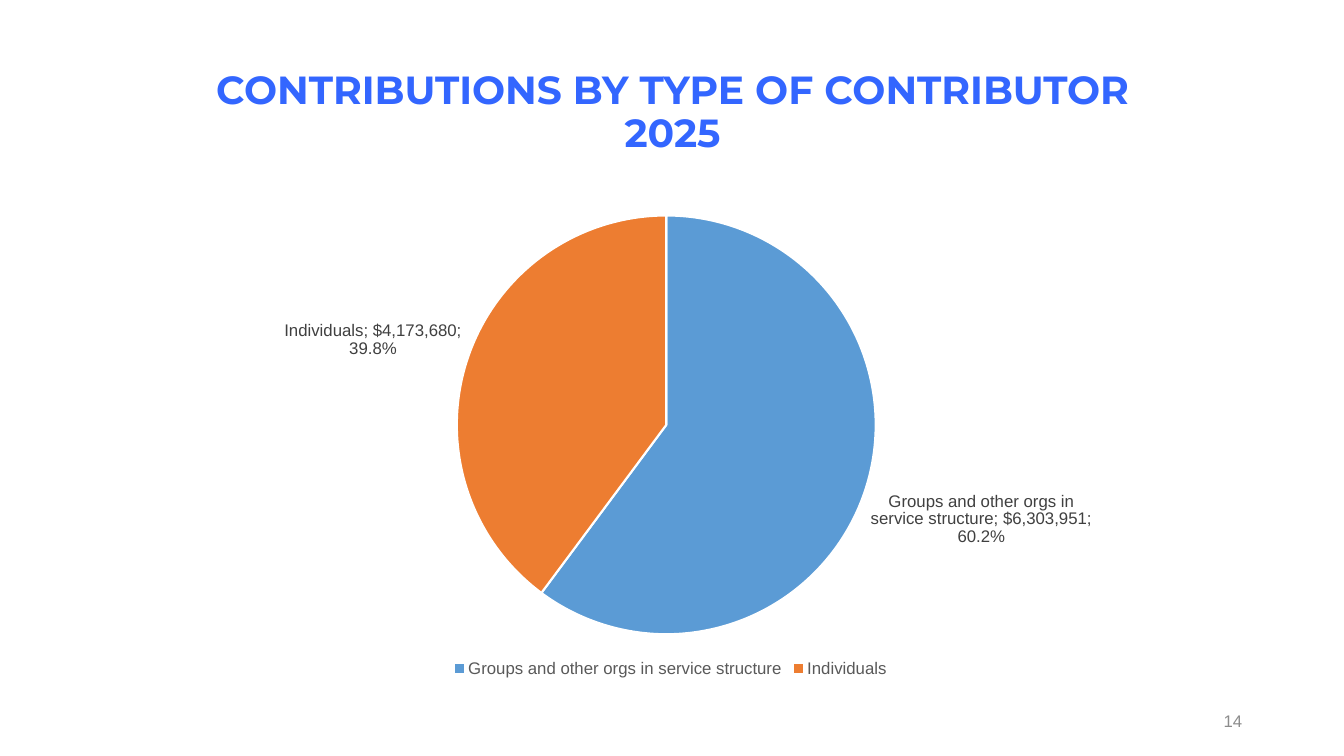
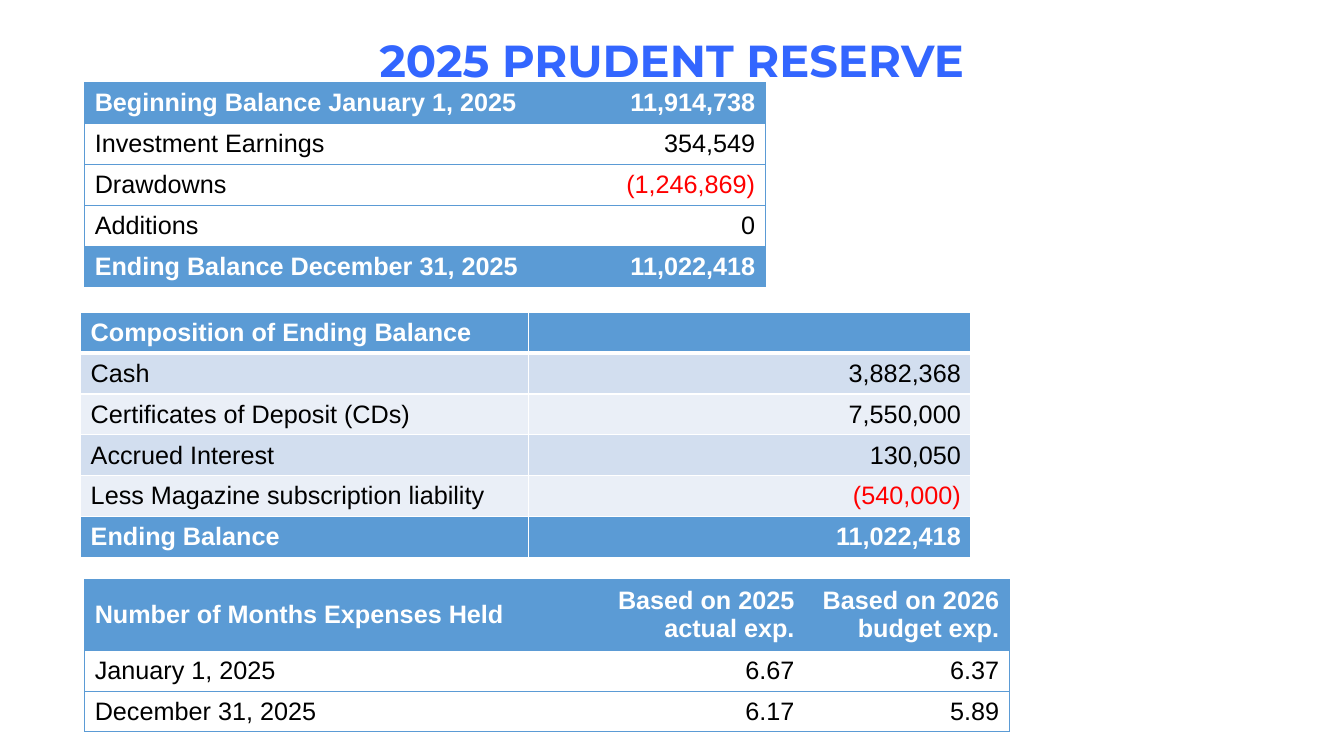
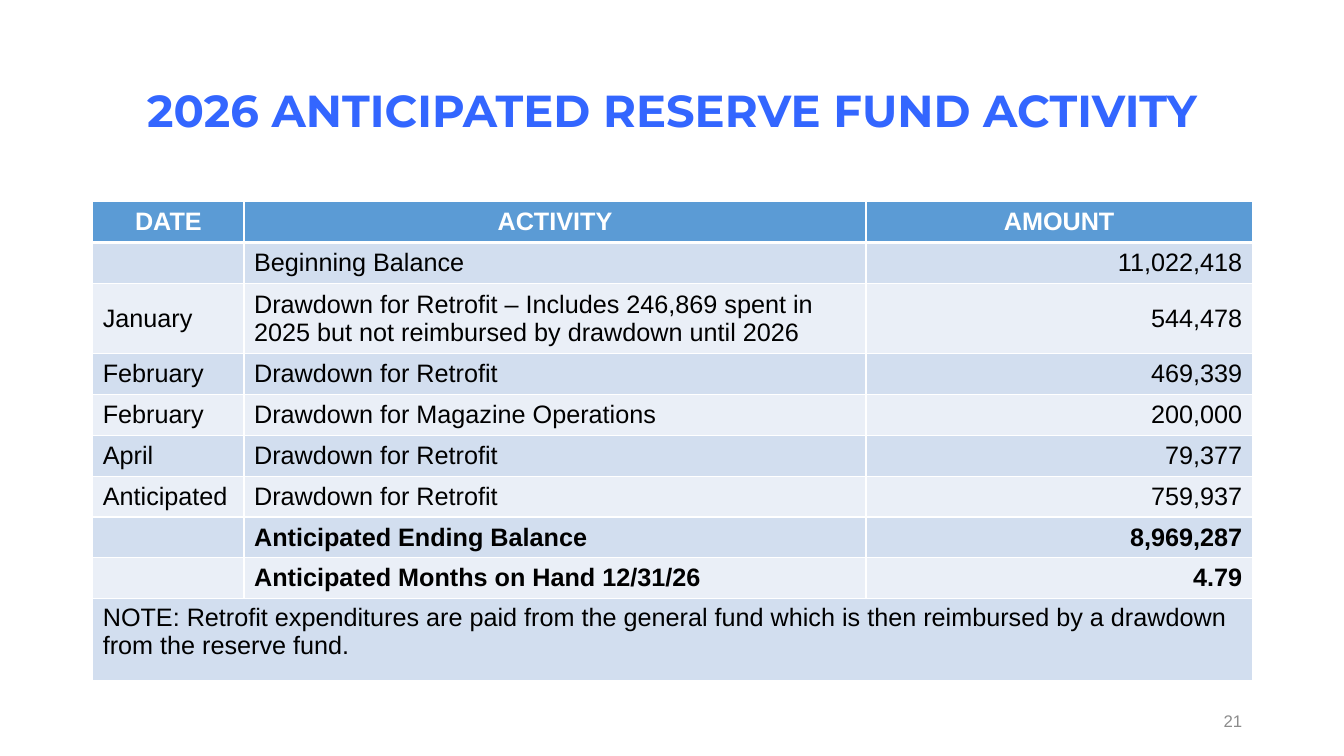
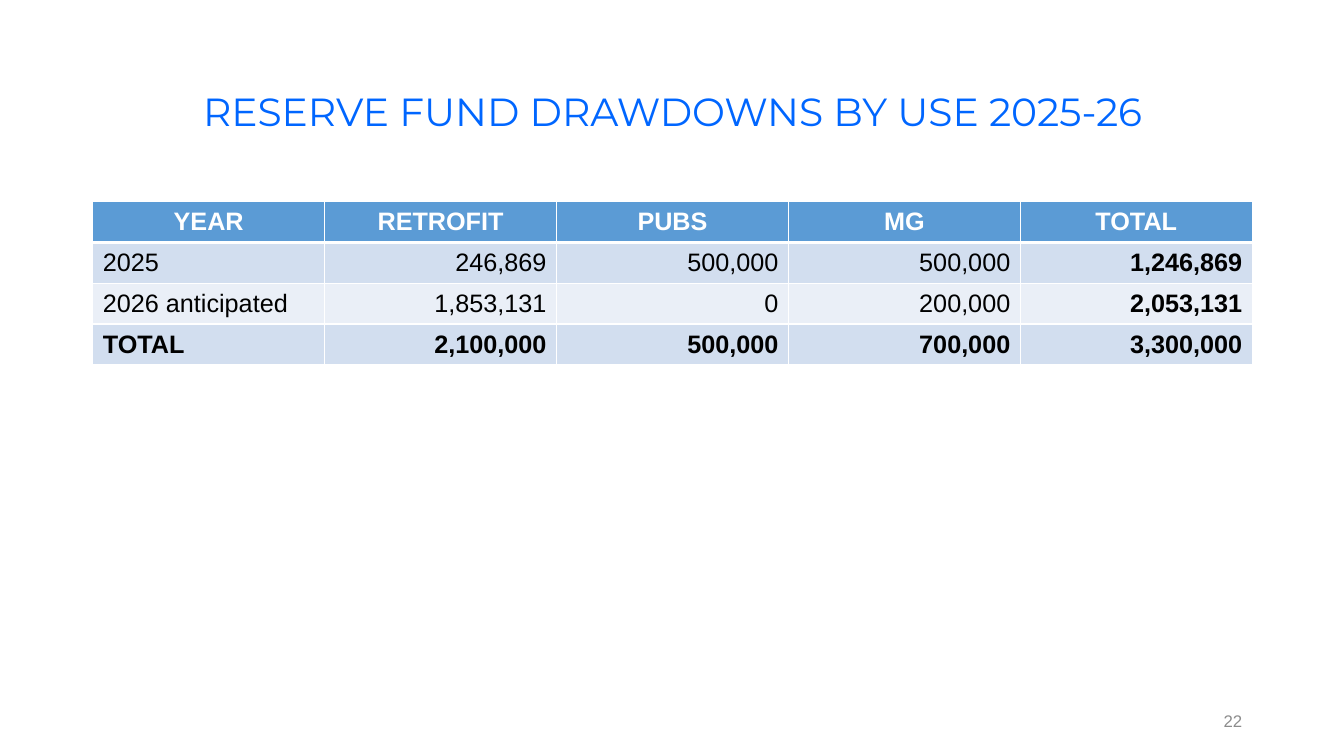
"""Build four slides on contributions and the reserve fund."""
from dataclasses import dataclass

from lxml import etree
from pptx import Presentation
from pptx import util as u
from pptx.chart.data import CategoryChartData
from pptx.dml.color import RGBColor
from pptx.enum import chart as charts, text
from pptx.oxml.ns import qn


@dataclass(frozen=True)
class Theme:
    heading: str = "Montserrat"
    body: str = "Arial"
    title: str = "3366FF"
    title_light: str = "0066FF"
    accent: str = "5B9BD5"
    orange: str = "ED7D31"
    bands: tuple = ("D2DEEF", "EAEFF7")
    white: str = "FFFFFF"
    black: str = "000000"
    negative: str = "FF0000"
    label: str = "404040"
    legend: str = "595959"
    number: str = "8C8C8C"
    title_size: int = 32
    title_small: int = 28
    table_size: int = 18
    small_size: int = 12


T = Theme()
WIDTH, HEIGHT = 13.33, 7.5
MARGIN, CONTENT = 0.92, 11.5
TOP, ROW, TALL_ROW = 2, 0.405, 0.67
TITLE_BOX = (MARGIN, 0.4, CONTENT, 1.45)
NUMBER_BOX = (9.42, 6.95, 3, 0.4)
LEFT, CENTER, RIGHT = text.PP_ALIGN.LEFT, text.PP_ALIGN.CENTER, text.PP_ALIGN.RIGHT

CONTRIBUTORS = [
    ("Groups and other orgs in service structure", 6303951, T.accent),
    ("Individuals", 4173680, T.orange),
]

RESERVE = dict(
    at=(0.84, 0.82), cols=(4.83, 1.92), outlined=True, total=True,
    rows=[
        ("Beginning Balance January 1, 2025", "11,914,738"),
        ("Investment Earnings", "354,549"),
        ("Drawdowns", "(1,246,869)"),
        ("Additions", "0"),
        ("Ending Balance December 31, 2025", "11,022,418"),
    ])

COMPOSITION = dict(
    at=(0.8, 3.1), cols=(4.44, 4.39), total=True,
    rows=[
        ("Composition of Ending Balance", ""),
        ("Cash", "3,882,368"),
        ("Certificates of Deposit (CDs)", "7,550,000"),
        ("Accrued Interest", "130,050"),
        ("Less Magazine subscription liability", "(540,000)"),
        ("Ending Balance", "11,022,418"),
    ])

MONTHS_HELD = dict(
    at=(0.84, 5.75), cols=(5.11, 2.03, 2.03), outlined=True, heights={0: TALL_ROW},
    rows=[
        ("Number of Months Expenses Held", "Based on 2025 actual exp.", "Based on 2026 budget exp."),
        ("January 1, 2025", "6.67", "6.37"),
        ("December 31, 2025", "6.17", "5.89"),
    ])

ACTIVITY = dict(
    at=(MARGIN, TOP), cols=(1.5, 6.17, 3.83), header_align=CENTER, first_number=2,
    heights={2: TALL_ROW, 9: 2 * ROW}, bold_rows=(7, 8),
    rows=[
        ("DATE", "ACTIVITY", "AMOUNT"),
        ("", "Beginning Balance", "11,022,418"),
        ("January", "Drawdown for Retrofit – Includes 246,869 spent in 2025 "
                    "but not reimbursed by drawdown until 2026", "544,478"),
        ("February", "Drawdown for Retrofit", "469,339"),
        ("February", "Drawdown for Magazine Operations", "200,000"),
        ("April", "Drawdown for Retrofit", "79,377"),
        ("Anticipated", "Drawdown for Retrofit", "759,937"),
        ("", "Anticipated Ending Balance", "8,969,287"),
        ("", "Anticipated Months on Hand 12/31/26", "4.79"),
        ("NOTE: Retrofit expenditures are paid from the general fund which is then "
         "reimbursed by a drawdown from the reserve fund.",),
    ])

DRAWDOWNS = dict(
    at=(MARGIN, TOP), cols=(CONTENT / 5,) * 5, header_align=CENTER,
    bold_rows=(3,), bold_cols=(4,),
    rows=[
        ("YEAR", "RETROFIT", "PUBS", "MG", "TOTAL"),
        ("2025", "246,869", "500,000", "500,000", "1,246,869"),
        ("2026 anticipated", "1,853,131", "0", "200,000", "2,053,131"),
        ("TOTAL", "2,100,000", "500,000", "700,000", "3,300,000"),
    ])

SLIDES = [
    dict(title="CONTRIBUTIONS BY TYPE OF CONTRIBUTOR\v2025", size=T.title_small,
         pie=CONTRIBUTORS, number="14"),
    dict(title="2025 PRUDENT RESERVE", box=(0, 0.04, WIDTH, 1.17),
         tables=[RESERVE, COMPOSITION, MONTHS_HELD]),
    dict(title="2026 ANTICIPATED RESERVE FUND ACTIVITY", tables=[ACTIVITY], number="21"),
    dict(title="RESERVE FUND DRAWDOWNS BY USE 2025-26", size=T.title_small,
         color=T.title_light, bold=False, tables=[DRAWDOWNS], number="22"),
]


def inches(lengths):
    return [u.Inches(length) for length in lengths]


def style_font(font, size, color, face=T.body, bold=False):
    font.name, font.size, font.bold = face, u.Pt(size), bold
    font.color.rgb = RGBColor.from_string(color)


def write(frame, words, align=LEFT, spacing=None, **style):
    paragraph = frame.paragraphs[0]
    paragraph.text = words
    paragraph.alignment = align
    paragraph.line_spacing = spacing
    for run in paragraph.runs:
        style_font(run.font, **style)


def add_text(slide, box, words, **style):
    frame = slide.shapes.add_textbox(*inches(box)).text_frame
    frame.word_wrap = True
    frame.vertical_anchor = text.MSO_ANCHOR.MIDDLE
    write(frame, words, **style)


def set_borders(cell, **sides):
    properties = cell._tc.get_or_add_tcPr()
    for side in "LRTB":
        color, points = sides[side]
        line = etree.SubElement(properties, qn(f"a:ln{side}"), w=str(u.Pt(points)))
        if color:
            solid = etree.SubElement(line, qn("a:solidFill"))
            etree.SubElement(solid, qn("a:srgbClr"), val=color)
        else:
            etree.SubElement(line, qn("a:noFill"))


def borders(r, c, last_col, outlined):
    if outlined:
        edge, none = (T.accent, 0.5), (None, 0)
        return dict(L=none if c else edge, R=edge if c == last_col else none, T=edge, B=edge)
    thin, thick = (T.white, 1), (T.white, 3)
    return dict(L=thin, R=thin, T=thick if r == 1 else thin, B=thin if r else thick)


def add_table(slide, at, cols, rows, outlined=False, total=False, header_align=None,
              first_number=1, heights={}, bold_rows=(), bold_cols=()):
    row_heights = [heights.get(r, ROW) for r in range(len(rows))]
    table = slide.shapes.add_table(len(rows), len(cols),
                                   *inches((*at, sum(cols), sum(row_heights)))).table
    table.first_row = table.horz_banding = False
    for column, width in zip(table.columns, inches(cols)):
        column.width = width
    for r, (values, height) in enumerate(zip(rows, inches(row_heights))):
        table.rows[r].height = height
        is_note = len(values) == 1
        if is_note:
            table.cell(r, 0).merge(table.cell(r, len(cols) - 1))
        strong = r == 0 or total and r == len(rows) - 1
        body_fill = T.white if outlined else T.bands[(r - 1) % 2]
        for c, words in enumerate(values):
            cell = table.cell(r, c)
            set_borders(cell, **borders(r, c, len(cols) - 1, outlined))
            cell.fill.solid()
            cell.fill.fore_color.rgb = RGBColor.from_string(T.accent if strong else body_fill)
            cell.vertical_anchor = text.MSO_ANCHOR.TOP if is_note else text.MSO_ANCHOR.MIDDLE
            align = RIGHT if c >= first_number else LEFT
            if r == 0 and header_align:
                align = header_align
            color = T.white if strong else T.negative if words.startswith("(") else T.black
            write(cell.text_frame, words, align=align, size=T.table_size, color=color,
                  bold=strong or r in bold_rows or c in bold_cols)


def add_pie(slide, parts):
    data = CategoryChartData(number_format='"$"#,##0')
    data.categories = [name for name, _, _ in parts]
    data.add_series("Series 1", [amount for _, amount, _ in parts])
    pie = slide.shapes.add_chart(charts.XL_CHART_TYPE.PIE,
                                 *inches((0.9, TOP, CONTENT, 4.76)), data).chart
    pie.has_title = False
    style_font(pie.font, T.small_size, T.legend)
    pie.has_legend = True
    pie.legend.position = charts.XL_LEGEND_POSITION.BOTTOM
    pie.legend.include_in_layout = False
    style_font(pie.legend.font, T.small_size, T.legend)
    plot = pie.plots[0]
    plot.vary_by_categories = True
    series = plot.series[0]
    for i, (_, _, color) in enumerate(parts):
        look = series.points[i].format
        look.fill.solid()
        look.fill.fore_color.rgb = RGBColor.from_string(color)
        look.line.color.rgb = RGBColor.from_string(T.white)
        look.line.width = u.Pt(1.5)
    labels = series.data_labels
    labels.show_category_name = labels.show_value = labels.show_percentage = True
    labels.number_format, labels.number_format_is_linked = "0.0%", False
    labels.position = charts.XL_LABEL_POSITION.OUTSIDE_END
    style_font(labels.font, T.small_size, T.label)
    separator = etree.Element(qn("c:separator"))
    separator.text = "; "
    labels._element.find(qn("c:showBubbleSize")).addnext(separator)


def build_slide(deck, title, box=TITLE_BOX, size=T.title_size, color=T.title, bold=True,
                pie=None, tables=(), number=None):
    slide = deck.slides.add_slide(deck.slide_layouts[6])
    add_text(slide, box, title, align=CENTER, spacing=0.9, size=size, color=color,
             face=T.heading, bold=bold)
    if pie:
        add_pie(slide, pie)
    for table in tables:
        add_table(slide, **table)
    if number:
        add_text(slide, NUMBER_BOX, number, align=RIGHT, size=T.small_size, color=T.number)


def main():
    deck = Presentation()
    deck.slide_width, deck.slide_height = inches((WIDTH, HEIGHT))
    for content in SLIDES:
        build_slide(deck, **content)
    deck.save("out.pptx")


if __name__ == "__main__":
    main()
